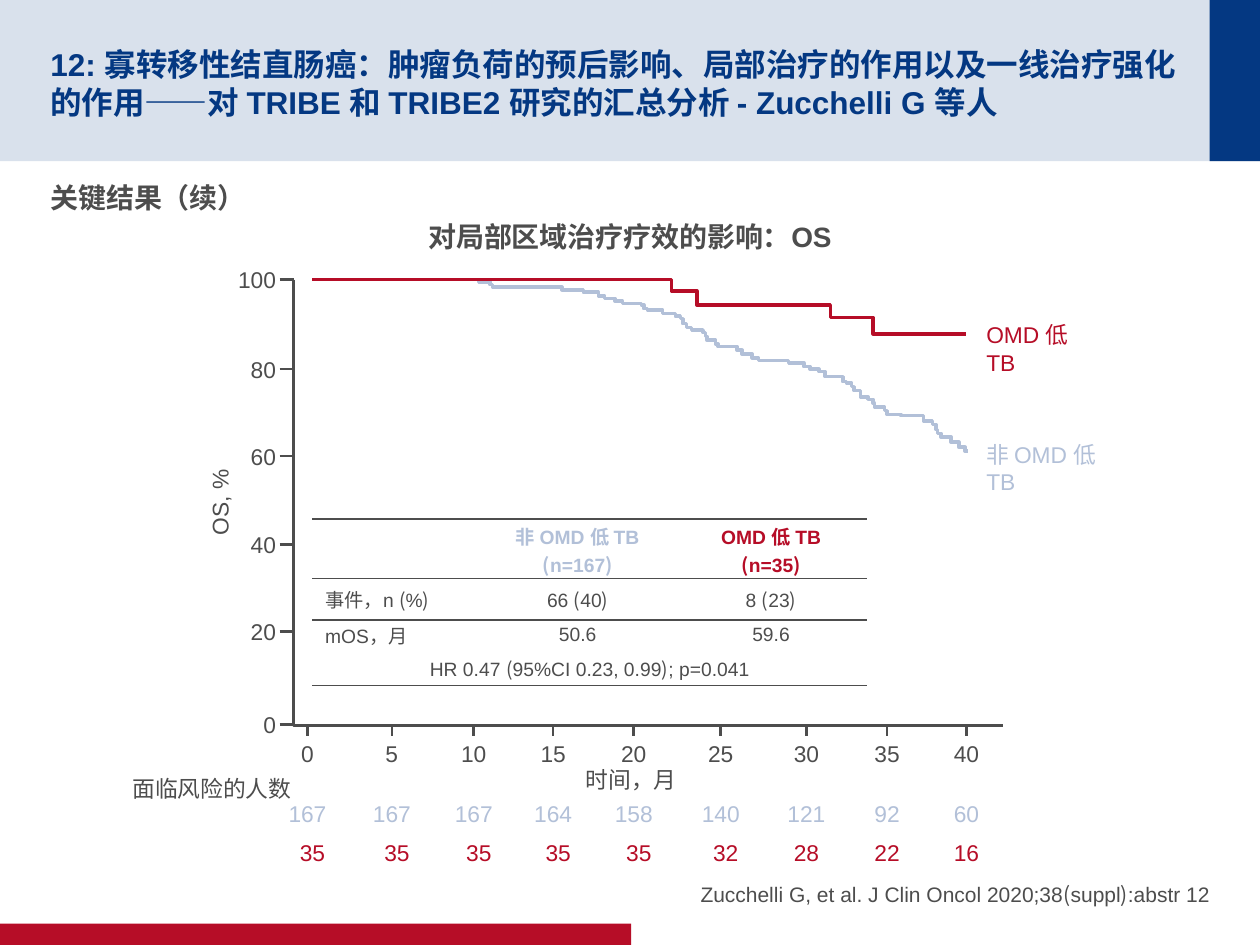
from itertools import groupby
from lxml import etree
from pptx import Presentation
from pptx.dml.color import RGBColor
from pptx.enum import shapes, text
from pptx.oxml import ns
from pptx.util import Pt

NAVY = RGBColor(0x04, 0x38, 0x82)
RED = RGBColor(0xB6, 0x0D, 0x27)
GREY = RGBColor(0x4D, 0x4D, 0x4D)
PALE = RGBColor(0xB2, 0xC0, 0xD8)
LEFT, MID, RIGHT = text.PP_ALIGN.LEFT, text.PP_ALIGN.CENTER, text.PP_ALIGN.RIGHT
TOP, CORE, BASE = text.MSO_ANCHOR.TOP, text.MSO_ANCHOR.MIDDLE, text.MSO_ANCHOR.BOTTOM
HAN = "Noto Sans CJK SC"
PLAIN = "{2D5ABB26-0587-4C30-8999-92F81FD0307C}"

deck = Presentation()
deck.slide_width, deck.slide_height = Pt(720), Pt(540)
col, row = deck.slide_width / 10, deck.slide_height / 7.5
slide = deck.slides.add_slide(deck.slide_layouts[6])
draw = slide.shapes


def write(frame, words, size, hue=GREY, bold=False, align=LEFT):
    para = frame.paragraphs[0]
    para.alignment = align
    for num, line in enumerate(words.split("\n")):
        if num:
            para.add_line_break()
        for han, part in groupby(line, lambda sign: sign in "()" or sign > "–"):
            run = para.add_run()
            run.text = "".join(part)
            font = run.font
            font.size, font.bold, font.color.rgb = Pt(size), bold, hue
            font.name = HAN if han else "Arial"
            etree.SubElement(font._element, ns.qn("a:ea"), typeface=HAN)


def box(x, y, wide, high, words, size, hue=GREY, bold=False, align=LEFT, anchor=TOP, pad=0.0):
    area = draw.add_textbox(int(x * col), int(y * row), int(wide * col), int(high * row))
    frame = area.text_frame
    frame.word_wrap, frame.vertical_anchor = True, anchor
    frame.margin_left = frame.margin_right = int(pad * col)
    frame.margin_top = frame.margin_bottom = int(min(pad, 0.05) * row)
    write(frame, words, size, hue, bold, align)
    return area


for x, y, wide, high, hue, alpha in (
    (0, 0, 10, 1.28, NAVY, 15), (9.6, 0, 0.4, 1.28, NAVY, 100), (0, 7.33, 5.01, 0.17, RED, 100),
):
    bar = draw.add_shape(shapes.MSO_SHAPE.RECTANGLE, int(x * col), int(y * row),
                         int(wide * col), int(high * row))
    bar.shadow.inherit = False
    bar.line.fill.background()
    bar.fill.solid()
    bar.fill.fore_color.rgb = hue
    tint = bar.fill._xPr.find(".//" + ns.qn("a:srgbClr"))
    etree.SubElement(tint, ns.qn("a:alpha"), val=str(alpha * 1000))

box(0.4, 0.22, 9.01, 0.88,
    "12: 寡转移性结直肠癌：肿瘤负荷的预后影响、局部治疗的作用以及一线治疗强化的作用——对 "
    "TRIBE 和 TRIBE2 研究的汇总分析 - Zucchelli G 等人", 18, NAVY, True, anchor=CORE)
box(0.4, 1.43, 9.2, 0.3, "关键结果（续）", 16, bold=True)
box(5.08, 6.67, 4.52, 0.53, "Zucchelli G, et al. J Clin Oncol 2020;38(suppl):abstr 12", 12,
    align=RIGHT, anchor=BASE)
box(3, 1.69, 4, 0.37, "对局部区域治疗疗效的影响：OS", 16, bold=True, align=MID, pad=0.1)

months = (2.44, 3.11, 3.76, 4.39, 5.03, 5.72, 6.4, 7.04, 7.67)
rates = (2.22, 2.93, 3.62, 4.32, 5.01, 5.75)
ticks = [(2.22, y, 2.33, y) for y in rates] + [(x, 5.75, x, 5.84) for x in months]
for ends in ticks:
    x, y, far, low = (int(end * col) for end in ends)
    tick = draw.add_connector(shapes.MSO_CONNECTOR.STRAIGHT, x, y, far, low)
    tick.line.color.rgb, tick.line.width = GREY, Pt(1.5)
    etree.SubElement(tick._element.spPr, ns.qn("a:effectLst"))

for num, y in enumerate(rates):
    box(1.63, y - 0.15, 0.6, 0.3, str(100 - 20 * num), 13, align=RIGHT, anchor=CORE, pad=0.04)

risk = (167, 167, 167, 164, 158, 140, 121, 92, 60)
local = (35, 35, 35, 35, 35, 32, 28, 22, 16)
for num, x in enumerate(months):
    shift = 0.04 if num < 6 else 0
    for mid, y, count, hue in (
        (x, 5.83, 5 * num, GREY), (x, 6.31, risk[num], PALE), (x + shift, 6.62, local[num], RED),
    ):
        box(mid - 0.3, y, 0.6, 0.3, str(count), 13, hue, align=MID, pad=0.04)

box(1.38, 3.82, 0.73, 0.32, "OS, %", 13, pad=0.1).rotation = 270
box(4.5, 6.03, 1.02, 0.32, "时间，月", 13, align=MID, pad=0.1)
box(0.7, 6.07, 1.69, 0.37, "面临风险的人数", 13, align=RIGHT, anchor=CORE, pad=0.08)
box(7.73, 2.5, 1, 0.5, "OMD 低 TB", 13, RED, pad=0.1)
box(7.73, 3.45, 1.25, 0.5, "非 OMD 低 TB", 13, PALE, pad=0.1)

cells = (
    ("", "非 OMD 低 TB\n(n=167)", "OMD 低 TB\n(n=35)"),
    ("事件，n (%)", "66 (40)", "8 (23)"),
    ("mOS，月", "50.6", "59.6"),
    ("HR 0.47 (95%CI 0.23, 0.99); p=0.041", "", ""),
)
frame = draw.add_table(4, 3, int(2.48 * col), int(4.12 * row), int(4.4 * col), int(1.32 * row))
frame._element.find(".//" + ns.qn("a:tableStyleId")).text = PLAIN
grid = frame.table
grid.first_row = grid.horz_banding = False
for part, wide in zip(grid.columns, (1.33, 1.55, 1.52)):
    part.width = int(wide * col)
for part, high in zip(grid.rows, (0.47, 0.33, 0.24, 0.28)):
    part.height = int(high * row)
grid.cell(3, 0).merge(grid.cell(3, 2))
rules = {0: ("a:lnT", "a:lnB"), 1: ("a:lnT",), 3: ("a:lnB",)}
for down, line in enumerate(cells):
    for over, words in enumerate(line):
        cell = grid.cell(down, over)
        cell.margin_top = cell.margin_bottom = 0
        cell.vertical_anchor = CORE if down else BASE
        hue = GREY if down else (GREY, PALE, RED)[over]
        write(cell.text_frame, words, 11, hue, not down, MID if over or down == 3 else LEFT)
        props = cell._tc.get_or_add_tcPr()
        for side in rules.get(down, ()):
            edge = etree.SubElement(props, ns.qn(side), w=str(Pt(1)))
            paint = etree.SubElement(edge, ns.qn("a:solidFill"))
            etree.SubElement(paint, ns.qn("a:srgbClr"), val=str(GREY))
        cell.fill.background()

fall = (
    (3.8, 2.24), (3.89, 2.26), (3.91, 2.28), (4.46, 2.3), (4.63, 2.32), (4.75, 2.35),
    (4.8, 2.37), (4.88, 2.39), (4.94, 2.41), (5.09, 2.42), (5.11, 2.45), (5.14, 2.46),
    (5.26, 2.49), (5.36, 2.51), (5.4, 2.53), (5.42, 2.57), (5.45, 2.6), (5.49, 2.62),
    (5.58, 2.64), (5.6, 2.67), (5.61, 2.7), (5.68, 2.73), (5.7, 2.75), (5.85, 2.78),
    (5.89, 2.81), (5.97, 2.84), (6.02, 2.86), (6.26, 2.88), (6.38, 2.91), (6.43, 2.93),
    (6.5, 2.95), (6.55, 2.99), (6.69, 3.03), (6.72, 3.04), (6.76, 3.07), (6.78, 3.1),
    (6.83, 3.15), (6.89, 3.17), (6.93, 3.2), (6.94, 3.23), (7.02, 3.26), (7.04, 3.29),
    (7.15, 3.3), (7.33, 3.34), (7.4, 3.37), (7.43, 3.41), (7.44, 3.44), (7.47, 3.47),
    (7.55, 3.51), (7.61, 3.55), (7.66, 3.58), (7.68, 3.58),
)
drop = ((5.33, 2.31), (5.53, 2.42), (6.59, 2.52), (6.93, 2.65), (7.67, 2.65))
axis = ((2.33, 5.76), (7.96, 5.76))
for x, y, steps, hue, size in (
    (2.33, 2.22, axis, GREY, 1.5), (2.48, 2.22, fall, PALE, 2), (2.48, 2.22, drop, RED, 2),
):
    pen = draw.build_freeform(int(x * col), int(y * row))
    for far, low in steps:
        pen.add_line_segments([(far * col, y * row), (far * col, low * row)], close=False)
        y = low
    curve = pen.convert_to_shape()
    curve.shadow.inherit = False
    curve.fill.background()
    curve.line.color.rgb, curve.line.width = hue, Pt(size)

deck.save("out.pptx")
